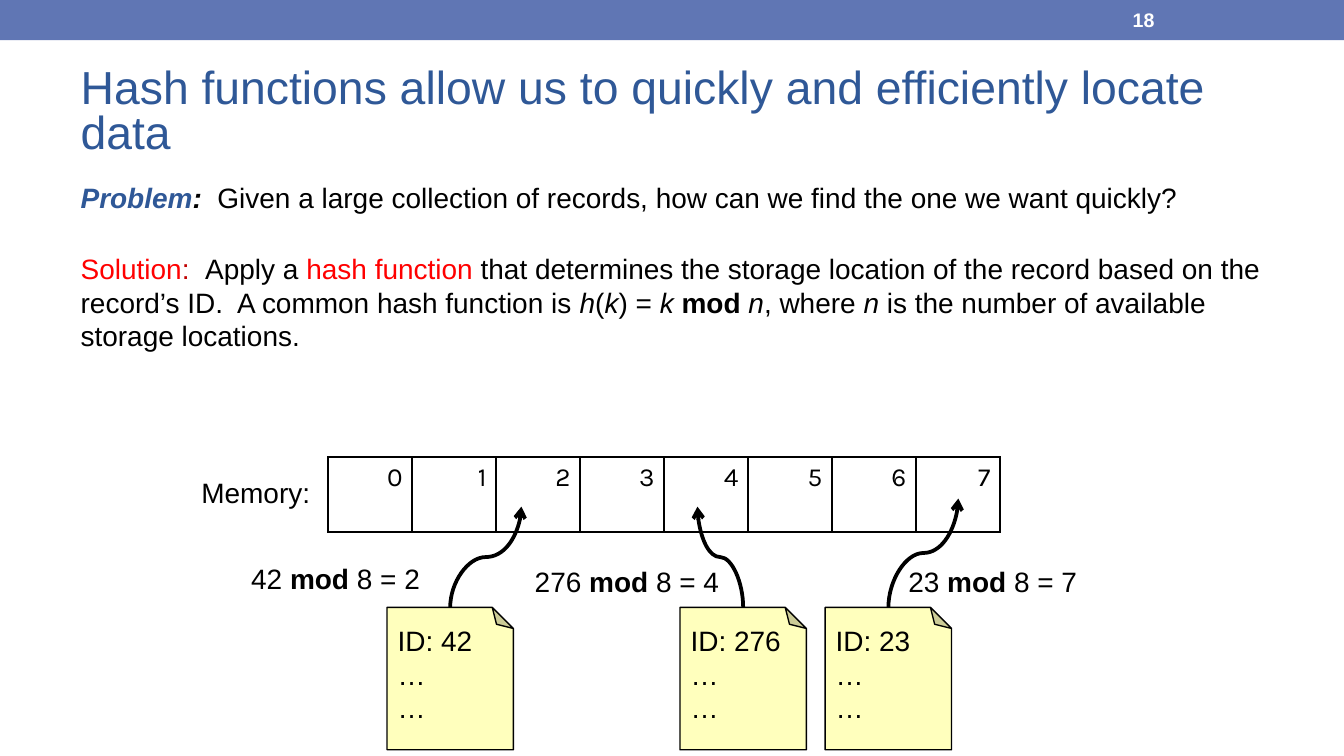
from dataclasses import dataclass

from lxml import etree
from pptx import Presentation
from pptx.dml.color import RGBColor as RGB
from pptx.enum.shapes import MSO_CONNECTOR as CONNECTOR, MSO_SHAPE as SHAPE
from pptx.enum.text import MSO_ANCHOR as ANCHOR, MSO_AUTO_SIZE as AUTO, PP_ALIGN as ALIGN
from pptx.oxml.ns import qn
from pptx.util import Inches, Pt


@dataclass(frozen=True)
class Theme:
    font: str = "Arial"
    cell_font: str = "Karla"
    bar: RGB = RGB(0x60, 0x76, 0xB4)
    accent: RGB = RGB(0x2F, 0x58, 0x97)
    red: RGB = RGB(0xFF, 0x00, 0x00)
    dark_red: RGB = RGB(0xC0, 0x00, 0x00)
    ink: RGB = RGB(0x00, 0x00, 0x00)
    white: RGB = RGB(0xFF, 0xFF, 0xFF)
    note: RGB = RGB(0xFF, 0xFF, 0xBD)
    title_size: float = 24.8
    text_size: float = 15
    cell_size: float = 14
    number_size: float = 10.5


T = Theme()
BOLD = {"bold": True}
ITALIC = {"italic": True}

PROBLEM = [
    ("Problem", {"bold": True, "italic": True, "color": T.accent}),
    (":", {"bold": True, "italic": True}),
    ("  Given a large collection of records, how can we find the one we want quickly?", {}),
]
SOLUTION = [
    ("Solution", {"color": T.red}),
    (":  ", {"color": T.dark_red}),
    ("Apply a ", {}),
    ("hash function ", {"color": T.red}),
    ("that determines the storage location of the record based on the record’s ID.  "
     "A common hash function is ", {}),
    ("h", ITALIC), ("(", {}), ("k", ITALIC), (") = ", {}), ("k ", ITALIC),
    ("mod ", BOLD), ("n", ITALIC), (", where ", {}), ("n", ITALIC),
    (" is the number of available storage locations.", {}),
]

SLIDE_WIDTH = 10
SLOTS = 8
NOTE_TOP = 4.52
# record ID, note left, ID text width, arrow tip (x, y), formula (left, top, width)
RECORDS = [
    (42, 2.88, 0.76, (3.88, 3.77), (1.77, 4.13, 1.47)),
    (276, 5.06, 0.88, (5.19, 3.77), (3.88, 4.15, 1.59)),
    (23, 6.14, 0.76, (7.13, 3.71), (6.66, 4.15, 1.47)),
]


def place(sp, left, top, width, height):
    sp.left, sp.top = Inches(left), Inches(top)
    sp.width, sp.height = Inches(width), Inches(height)


def set_font(font, size, color=T.ink, name=T.font, bold=False):
    font.name, font.size, font.bold = name, Pt(size), bold
    font.color.rgb = color


def add_runs(p, runs):
    """Fill a paragraph with (text, style) pairs."""
    set_font(p.font, T.text_size)
    for text, style in runs:
        r = p.add_run()
        r.text = text
        r.font.bold = style.get("bold", False)
        r.font.italic = style.get("italic", False)
        r.font.color.rgb = style.get("color", T.ink)


def add_label(shapes, box, paragraphs):
    """Add an unwrapped text box; each paragraph is a list of runs."""
    tf = shapes.add_textbox(*map(Inches, box)).text_frame
    tf.word_wrap = False
    tf.auto_size = AUTO.SHAPE_TO_FIT_TEXT
    for i, runs in enumerate(paragraphs):
        add_runs(tf.add_paragraph() if i else tf.paragraphs[0], runs)


def add_header(s):
    bar = s.shapes.add_shape(SHAPE.RECTANGLE, 0, 0, Inches(SLIDE_WIDTH), Inches(0.3))
    bar.shadow.inherit = False
    bar.fill.solid()
    bar.fill.fore_color.rgb = T.bar
    bar.line.fill.background()
    tf = s.shapes.add_textbox(*map(Inches, (8.33, 0.01, 1.17, 0.27))).text_frame
    tf.word_wrap = True
    tf.vertical_anchor = ANCHOR.MIDDLE
    p = tf.paragraphs[0]
    p.text = "18"
    set_font(p.font, T.number_size, T.white, bold=True)


def fill_title(sp, text):
    place(sp, 0.5, 0.44, 9, 0.81)
    tf = sp.text_frame
    tf.text = text
    tf.auto_size = AUTO.NONE
    tf.vertical_anchor = ANCHOR.MIDDLE
    p = tf.paragraphs[0]
    p.alignment, p.line_spacing = ALIGN.LEFT, 0.8
    set_font(p.font, T.title_size, T.accent)


def fill_body(sp):
    place(sp, 0.5, 1.29, 9, 2)
    tf = sp.text_frame
    tf.auto_size = AUTO.NONE
    for p, runs, gap in ((tf.paragraphs[0], PROBLEM, 3.6), (tf.add_paragraph(), SOLUTION, 20.3)):
        add_runs(p, runs)
        p.space_before = Pt(gap)
        pPr = p._p.get_or_add_pPr()
        pPr.set("marL", "0")
        pPr.set("indent", "0")
        pPr.insert_element_before(etree.Element(qn("a:buNone")), "a:tabLst", "a:defRPr", "a:extLst")


def add_borders(cell):
    tcPr = cell._tc.get_or_add_tcPr()
    for i, side in enumerate(("lnL", "lnR", "lnT", "lnB")):
        ln = etree.Element(qn(f"a:{side}"), w=str(Pt(1)))
        fill = etree.SubElement(ln, qn("a:solidFill"))
        etree.SubElement(fill, qn("a:srgbClr"), val=str(T.ink))
        tcPr.insert(i, ln)


def add_memory(s):
    add_label(s.shapes, (1.4, 3.49, 1.02, 0.35), [[("Memory:", {})]])
    table = s.shapes.add_table(1, SLOTS, *map(Inches, (2.44, 3.4, 5, 0.56))).table
    table.first_row = table.horz_banding = False
    for i, cell in enumerate(table.iter_cells()):
        cell.text = str(i)
        cell.margin_left = cell.margin_right = Inches(0.07)
        cell.margin_top = cell.margin_bottom = Inches(0.04)
        cell.fill.background()
        add_borders(cell)
        p = cell.text_frame.paragraphs[0]
        p.alignment = ALIGN.RIGHT
        set_font(p.font, T.cell_size, name=T.cell_font)


def add_note(s, record, left, text_width):
    shapes = s.shapes.add_group_shape().shapes
    note = shapes.add_shape(SHAPE.FOLDED_CORNER, *map(Inches, (left, NOTE_TOP, 0.94, 1.06)))
    note.shadow.inherit = False
    note.element.spPr.xfrm.set("flipV", "1")
    note.fill.solid()
    note.fill.fore_color.rgb = T.note
    note.line.color.rgb = T.ink
    note.line.width = Pt(0.75)
    lines = [[(text, {})] for text in (f"ID: {record}", "…", "…")]
    add_label(shapes, (left - 0.02, NOTE_TOP + 0.07, text_width, 0.86), lines)


def add_curve(s, start, end):
    """Draw an S-curve that leaves and arrives vertically: a horizontal one turned by 90°."""
    (x0, y0), (x1, y1) = start, end
    cx, cy = (x0 + x1) / 2, (y0 + y1) / 2
    dx, dy = (y0 - y1) / 2, (x1 - x0) / 2
    curve = s.shapes.add_connector(
        CONNECTOR.CURVE, *map(Inches, (cx + dx, cy + dy, cx - dx, cy - dy)))
    curve.rotation = 90
    curve.line.color.rgb = T.ink
    curve.line.width = Pt(2)
    etree.SubElement(curve.line._get_or_add_ln(), qn("a:tailEnd"), type="arrow")
    etree.SubElement(curve.element.spPr, qn("a:effectLst"))


def main():
    prs = Presentation()
    prs.slide_width, prs.slide_height = Inches(SLIDE_WIDTH), Inches(SLIDE_WIDTH * 9 / 16)
    s = prs.slides.add_slide(prs.slide_layouts[1])
    add_header(s)
    fill_title(s.shapes.title, "Hash functions allow us to quickly and efficiently locate data")
    fill_body(s.placeholders[1])
    add_memory(s)
    for record, left, text_width, tip, (x, y, width) in RECORDS:
        add_note(s, record, left, text_width)
        add_curve(s, (left + 0.47, NOTE_TOP), tip)
        formula = [(f"{record} ", {}), ("mod", BOLD), (f" {SLOTS} = {record % SLOTS}", {})]
        add_label(s.shapes, (x, y, width, 0.35), [formula])
    prs.save("out.pptx")


if __name__ == "__main__":
    main()
